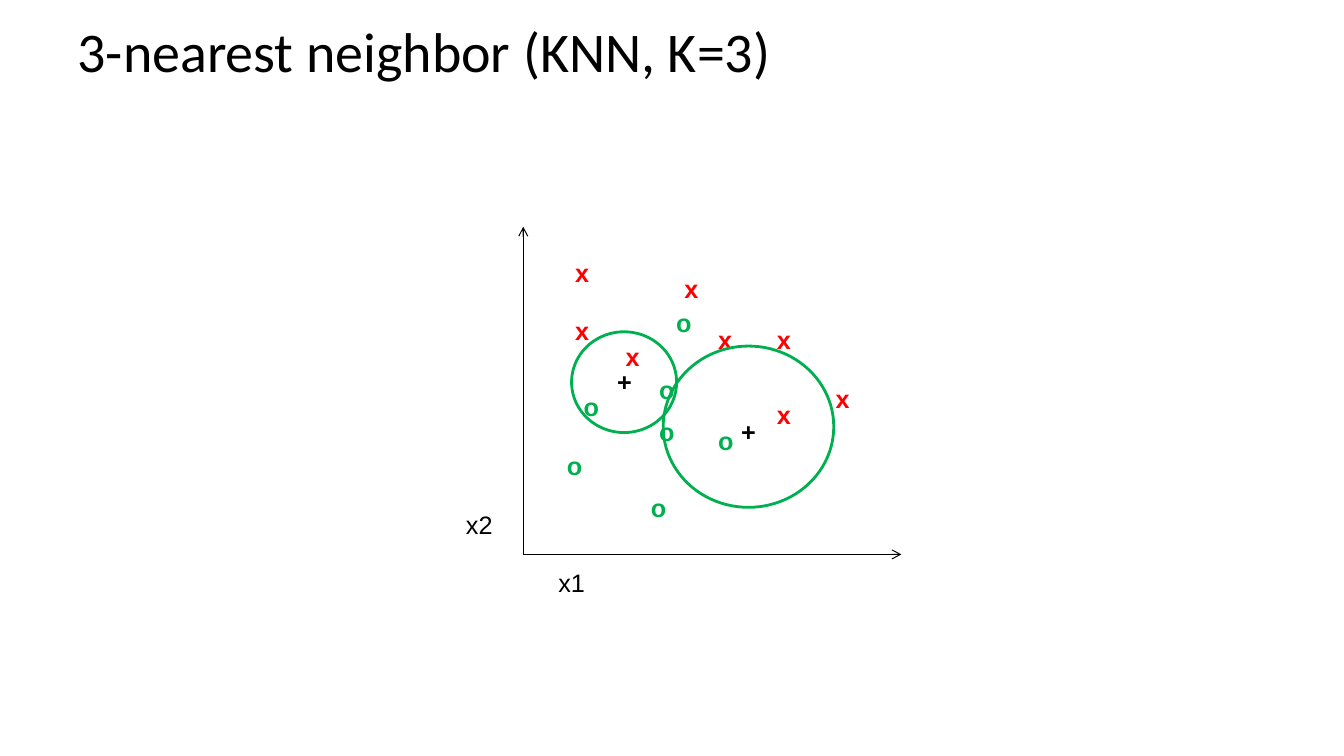
from pptx import Presentation, util as u
from pptx.dml.color import RGBColor
from pptx.enum import shapes, text
from pptx.oxml import parse_xml
from pptx.oxml.ns import nsdecls, qn

TITLE = "3-nearest neighbor (KNN, K=3)"

# Places are in grid cells, right of and up from the origin of the plot.
MARKS = {
    "x": [(22, 28), (29, 28), (29, 19), (36, 21), (5, 36), (5, 29), (18, 34), (11, 26)],
    "o": [(17, 30), (22, 16), (4, 13), (6, 20), (14, 8), (15, 17), (15, 22)],
    "x2": [(-8, 6)],
    "x1": [(3, -1)],
    "+": [(10, 23), (24.75, 17)],
}
AXES = [(0, 39), (45, 0)]
RINGS = [((12, 20.5), (12.5, 12)), ((26.8, 15.2), (20.3, 19.2))]  # centre, size

THEME = {
    "ink": RGBColor(0, 0, 0),
    "red": RGBColor(255, 0, 0),
    "green": RGBColor(0, 176, 80),
    "head": u.Pt(40),
    "body": u.Pt(18),
    "axis": u.Pt(0.75),
    "ring": u.Pt(2),
}
STYLES = {  # box width in inches, colour, bold
    "x": (0.34, "red", True),
    "o": (0.36, "green", True),
    "+": (0.35, "ink", True),
    "x1": (0.47, "ink", False),
    "x2": (0.47, "ink", False),
}
CELL = 1 / 12
ORIGIN = (5.19, 5.5)
BOX_HIGH = 0.4


def place(col, row):
    """Turn a grid place into slide lengths."""
    return u.Inches(ORIGIN[0] + col * CELL), u.Inches(ORIGIN[1] - row * CELL)


def put(item, **values):
    for name, value in values.items():
        setattr(item, name, value)


def write(frame, words, color, **font):
    run = frame.paragraphs[0].add_run()
    run.text = words
    put(run.font, **font)
    run.font.color.rgb = THEME[color]


def add_title(slide):
    title = slide.shapes.title
    put(title, left=u.Inches(0.67), top=0, width=u.Inches(12), height=u.Inches(1))
    frame = title.text_frame
    frame.vertical_anchor = text.MSO_ANCHOR.MIDDLE
    frame.paragraphs[0].alignment = text.PP_ALIGN.LEFT
    write(frame, TITLE, "ink", name="Calibri", size=THEME["head"])


def add_mark(slide, sign, spot):
    wide, color, bold = STYLES[sign]
    box = slide.shapes.add_textbox(*place(*spot), u.Inches(wide), u.Inches(BOX_HIGH))
    put(box.text_frame, word_wrap=False, auto_size=text.MSO_AUTO_SIZE.SHAPE_TO_FIT_TEXT)
    write(box.text_frame, sign, color, name="Arial", size=THEME["body"], bold=bold)


def add_axis(slide, end):
    axis = slide.shapes.add_connector(
        shapes.MSO_CONNECTOR.STRAIGHT, *place(0, 0), *place(*end))
    axis.line.color.rgb = THEME["ink"]
    axis.line.width = THEME["axis"]
    props = axis._element.spPr
    props.find(qn("a:ln")).append(parse_xml(f'<a:tailEnd {nsdecls("a")} type="arrow"/>'))
    props.append(parse_xml(f'<a:effectLst {nsdecls("a")}/>'))


def add_ring(slide, mid, size):
    wide, high = size
    corner = place(mid[0] - wide / 2, mid[1] + high / 2)
    ring = slide.shapes.add_shape(
        shapes.MSO_SHAPE.OVAL, *corner, u.Inches(wide * CELL), u.Inches(high * CELL))
    ring.shadow.inherit = False
    ring.fill.background()
    ring.line.color.rgb = THEME["green"]
    ring.line.width = THEME["ring"]


def main():
    deck = Presentation()
    put(deck, slide_width=u.Inches(13.33), slide_height=u.Inches(7.5))
    slide = deck.slides.add_slide(deck.slide_layouts.get_by_name("Title Only"))
    add_title(slide)
    for sign, spots in MARKS.items():
        for spot in spots:
            add_mark(slide, sign, spot)
    for end in AXES:
        add_axis(slide, end)
    for mid, size in RINGS:
        add_ring(slide, mid, size)
    deck.save("out.pptx")


if __name__ == "__main__":
    main()
